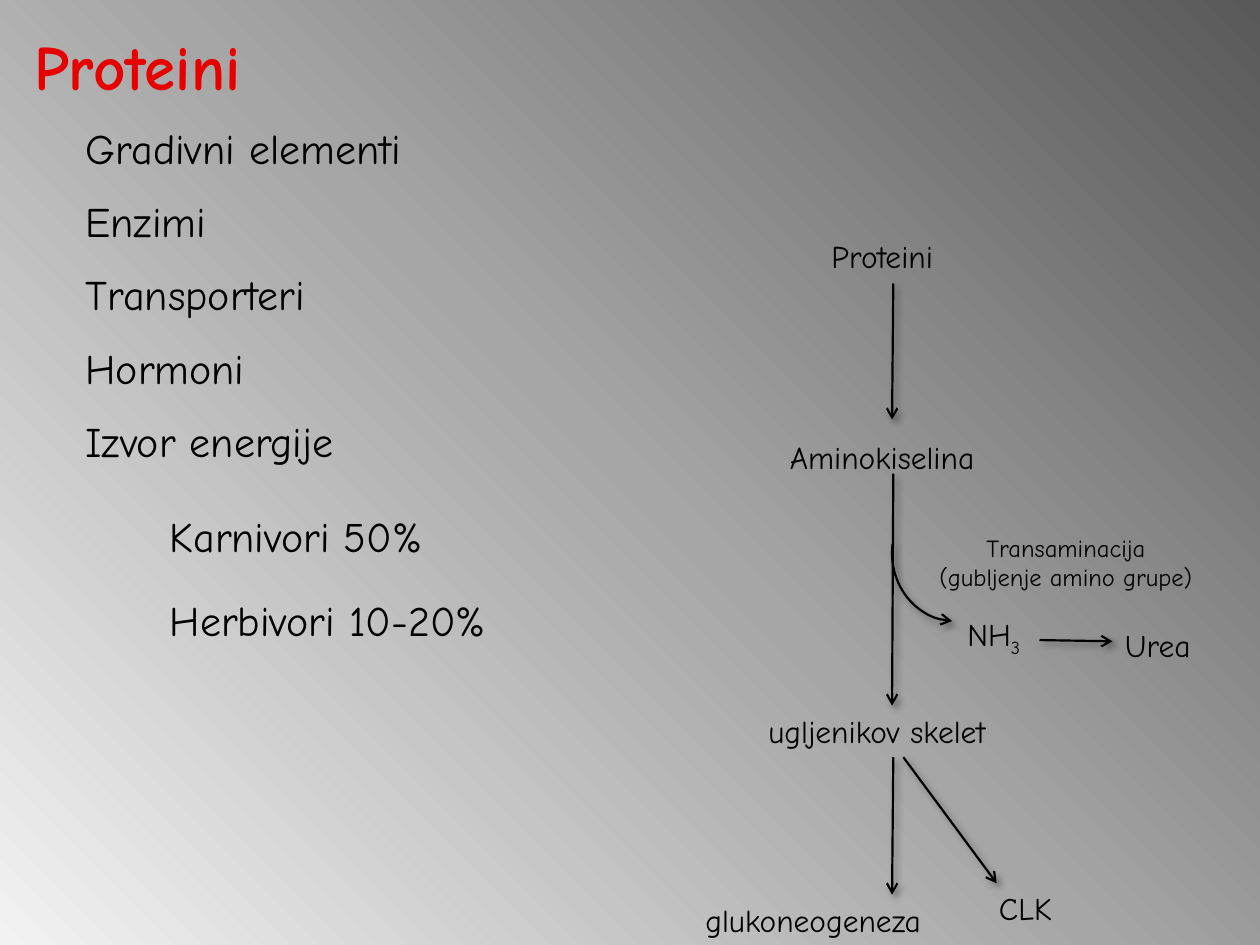
"""Build a slide on the roles of proteins and how they break down."""
import copy
import dataclasses

import lxml.etree
import pptx
import pptx.dml.color
import pptx.enum.shapes
import pptx.enum.text
import pptx.oxml.ns
import pptx.util

PX = 9144
FONT = "Comic Neue"
HUES = {
    "ink": "000000",
    "title": "E60000",
    "dark": "595959",
    "mid": "A6A6A6",
    "light": "F2F2F2",
}


@dataclasses.dataclass
class Label:
    text: str
    left: int
    top: int
    width: int
    height: int = 40
    size: int = 18
    wrap: bool = True
    mid: bool = False
    sub: str = ""


@dataclasses.dataclass
class Arrow:
    left: int
    top: int
    right: int
    end: int


ROLES = [
    ("Gradivni elementi", 293),
    ("Enzimi", 122),
    ("Transporteri", 222),
    ("Hormoni", 151),
    ("Izvor energije", 247),
]
DIETS = [("Karnivori 50%", 240), ("Herbivori 10-20%", 303)]

LISTS = [
    Label(text, left, top + round(step * row), width, 51, 24, wrap=False)
    for items, left, top, step in ((ROLES, 58, 92, 58.25), (DIETS, 125, 400, 67))
    for row, (text, width) in enumerate(items)
]
NODES = [
    Label("Transaminacija\n(gubljenje amino grupe)", 692, 418, 308, 57, 14, mid=True),
    Label("Proteini", 650, 183, 125),
    Label("Aminokiselina", 617, 343, 192),
    Label("ugljenikov skelet", 600, 560, 233),
    Label("glukoneogeneza", 550, 710, 200),
    Label("CLK", 783, 701, 92),
    Label("NH", 758, 483, 92, sub="3"),
    Label("Urea", 883, 492, 92),
]
ARROWS = [
    Arrow(709, 225, 708, 333),
    Arrow(709, 376, 708, 560),
    Arrow(709, 601, 708, 710),
    Arrow(717, 601, 791, 701),
    Arrow(825, 508, 883, 509),
]


def tint(name: str) -> pptx.dml.color.RGBColor:
    return pptx.dml.color.RGBColor.from_string(HUES[name])


def add_node(base, tag: str, **attrs: str):
    node = lxml.etree.SubElement(base, pptx.oxml.ns.qn(tag))
    for key, value in attrs.items():
        node.set(key, value)
    return node


def place(shape, left: int, top: int, width: int, height: int) -> None:
    shape.left, shape.top = left * PX, top * PX
    shape.width, shape.height = width * PX, height * PX


def style(para, size: int, hue: str = "ink", bold: bool = False) -> None:
    para.font.name = FONT
    para.font.size = pptx.util.Pt(size)
    para.font.bold = bold
    para.font.color.rgb = tint(hue)


def paint(slide) -> None:
    fill = slide.background.fill
    fill.gradient()
    fill.gradient_angle = 225
    stops = slide.element.find(".//" + pptx.oxml.ns.qn("a:gsLst"))
    stops.insert(1, copy.deepcopy(stops[0]))
    for stop, spot, hue in zip(fill.gradient_stops, (0, 0.5, 1), ("dark", "mid", "light")):
        stop.position = spot
        stop.color.rgb = tint(hue)


def add_title(slide, text: str) -> None:
    title = slide.shapes.title
    place(title, 17, 17, 205, 71)
    frame = title.text_frame
    frame.text = text
    frame.word_wrap = False
    frame.auto_size = pptx.enum.text.MSO_AUTO_SIZE.SHAPE_TO_FIT_TEXT
    frame.vertical_anchor = pptx.enum.text.MSO_ANCHOR.TOP
    para = frame.paragraphs[0]
    para.alignment = pptx.enum.text.PP_ALIGN.LEFT
    style(para, 36, "title", True)


def add_label(slide, label: Label) -> None:
    box = slide.shapes.add_textbox(0, 0, 0, 0)
    place(box, label.left, label.top, label.width, label.height)
    frame = box.text_frame
    frame.text = label.text
    frame.word_wrap = label.wrap
    frame.auto_size = pptx.enum.text.MSO_AUTO_SIZE.SHAPE_TO_FIT_TEXT
    if label.sub:
        run = frame.paragraphs[0].add_run()
        run.text = label.sub
        run.font._element.set("baseline", "-25000")
    for para in frame.paragraphs:
        if label.mid:
            para.alignment = pptx.enum.text.PP_ALIGN.CENTER
        style(para, label.size)


def ink_line(shape, end: str) -> None:
    shape.line.color.rgb = tint("ink")
    shape.line.width = pptx.util.Pt(1.25)
    props = shape.element.spPr
    add_node(props.find(pptx.oxml.ns.qn("a:ln")), end, type="arrow")
    glow = add_node(
        add_node(props, "a:effectLst"), "a:outerShdw",
        blurRad=str(pptx.util.Pt(4)), dist=str(pptx.util.Pt(3)),
        dir="2700000", algn="tl", rotWithShape="0",
    )
    shade = add_node(glow, "a:srgbClr", val=HUES["ink"])
    add_node(shade, "a:alpha", val="40000")


def add_arrow(slide, arrow: Arrow) -> None:
    line = slide.shapes.add_connector(
        pptx.enum.shapes.MSO_CONNECTOR.STRAIGHT,
        arrow.left * PX, arrow.top * PX, arrow.right * PX, arrow.end * PX,
    )
    ink_line(line, "a:tailEnd")


def add_curve(slide) -> None:
    arc = slide.shapes.add_shape(pptx.enum.shapes.MSO_SHAPE.ARC, 0, 0, 0, 0)
    place(arc, 708, 385, 100, 108)
    arc.adjustments[0] = 55.45
    arc.adjustments[1] = 112.95
    arc.fill.background()
    ink_line(arc, "a:headEnd")


def main() -> None:
    deck = pptx.Presentation()
    deck.slide_width, deck.slide_height = 1000 * PX, 750 * PX
    slide = deck.slides.add_slide(deck.slide_layouts[5])
    paint(slide)
    add_title(slide, "Proteini")
    for label in LISTS + NODES:
        add_label(slide, label)
    for arrow in ARROWS:
        add_arrow(slide, arrow)
    add_curve(slide)
    deck.save("out.pptx")


if __name__ == "__main__":
    main()
